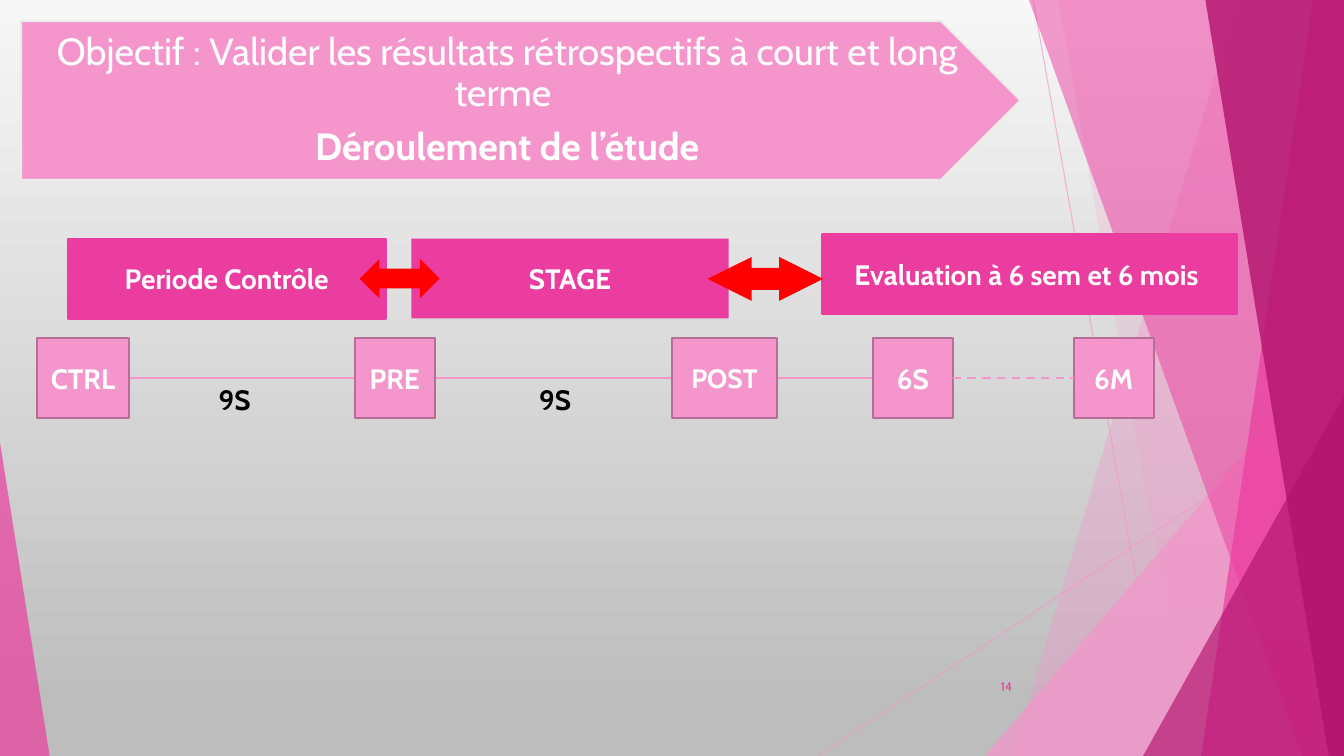
from lxml import etree
from pptx import Presentation
from pptx.dml.color import RGBColor
from pptx.enum.dml import MSO_LINE
from pptx.enum.shapes import MSO_CONNECTOR, MSO_SHAPE
from pptx.enum.text import MSO_ANCHOR, MSO_AUTO_SIZE, PP_ALIGN
from pptx.oxml.ns import qn
from pptx.util import Pt

STRAIGHT = MSO_CONNECTOR.STRAIGHT
DASH = MSO_LINE.DASH
RECTANGLE = MSO_SHAPE.RECTANGLE
TRIANGLE = MSO_SHAPE.ISOSCELES_TRIANGLE
DOUBLE_ARROW = MSO_SHAPE.LEFT_RIGHT_ARROW
PENTAGON = MSO_SHAPE.PENTAGON
MIDDLE = MSO_ANCHOR.MIDDLE
TOP = MSO_ANCHOR.TOP
NO_FIT = MSO_AUTO_SIZE.NONE
LEFT, CENTER, RIGHT = PP_ALIGN.LEFT, PP_ALIGN.CENTER, PP_ALIGN.RIGHT

FONT = "Cabin"
LIGHT, PINK, DARK = "F496CB", "EB3D9F", "B2136D"
WHITE, BLACK, RED = "FFFFFF", "000000", "FF0000"
WIDTH, HEIGHT = 960, 540
AXIS = 270


def colour(value):
    """Turn a hex string into a colour."""
    return RGBColor.from_string(value)


class Page:
    """Draw styled elements on one slide, with lengths in points."""

    def __init__(self, deck):
        """Add a slide that has a title placeholder."""
        self.slide = deck.slides.add_slide(deck.slide_layouts[5])
        self.shapes = self.slide.shapes

    def background(self, start, end, end_position):
        """Fill the slide with a gradient from top to bottom."""
        fill = self.slide.background.fill
        fill.gradient()
        fill.gradient_angle = 270
        for stop, value, position in zip(fill.gradient_stops, (start, end), (0, end_position)):
            stop.color.rgb = colour(value)
            stop.position = position

    def fade(self, shape, percent):
        """Set the opacity of the first colour of a shape."""
        value = next(shape._element.spPr.iter(qn("a:srgbClr")))
        etree.SubElement(value, qn("a:alpha"), val=str(percent * 1000))

    def paint(self, shape, fill, line=None, opacity=100):
        """Give a shape its fill, outline and opacity."""
        shape.shadow.inherit = False
        shape.fill.solid()
        shape.fill.fore_color.rgb = colour(fill)
        if line:
            shape.line.color.rgb = colour(line)
            shape.line.width = Pt(1.5)
        else:
            shape.line.fill.background()
        if opacity < 100:
            self.fade(shape, opacity)

    def style(self, para, size, value, bold=False, align=CENTER):
        """Format one paragraph."""
        para.alignment = align
        para.font.name = FONT
        para.font.size = Pt(size)
        para.font.bold = bold
        para.font.color.rgb = colour(value)

    def shape(self, kind, frame, fill, line=None, opacity=100, adjustments=()):
        """Add a preset shape."""
        shape = self.shapes.add_shape(kind, *map(Pt, frame))
        for index, value in enumerate(adjustments):
            shape.adjustments[index] = value
        self.paint(shape, fill, line, opacity)
        return shape

    def box(self, frame, text, fill, line=None, size=20):
        """Add a rectangle with a bold white label."""
        frame_text = self.shape(RECTANGLE, frame, fill, line).text_frame
        frame_text.text = text
        frame_text.word_wrap = True
        frame_text.vertical_anchor = MIDDLE
        self.style(frame_text.paragraphs[0], size, WHITE, True)

    def band(self, top_left, bottom_left, fill, opacity):
        """Add a full-height band that reaches the right edge."""
        builder = self.shapes.build_freeform(top_left, 0, scale=float(Pt(1)))
        builder.add_line_segments([(WIDTH, 0), (WIDTH, HEIGHT), (bottom_left, HEIGHT)])
        self.paint(builder.convert_to_shape(), fill, opacity=opacity)

    def line(self, start, end, width=1.5, dash=None, opacity=100):
        """Add a straight line."""
        line = self.shapes.add_connector(STRAIGHT, *map(Pt, start + end))
        line.line.color.rgb = colour(LIGHT)
        line.line.width = Pt(width)
        if dash:
            line.line.dash_style = dash
        if opacity < 100:
            self.fade(line, opacity)
        etree.SubElement(line._element.spPr, qn("a:effectLst"))

    def text(self, frame, text, size, value, bold=False, align=LEFT, anchor=TOP):
        """Add a text box."""
        frame_text = self.shapes.add_textbox(*map(Pt, frame)).text_frame
        frame_text.word_wrap = True
        frame_text.vertical_anchor = anchor
        frame_text.text = text
        self.style(frame_text.paragraphs[0], size, value, bold, align)

    def title(self, frame, lines):
        """Bring the title to the front and fill it with (text, bold) lines."""
        title = self.shapes.title
        title.left, title.top, title.width, title.height = map(Pt, frame)
        self.shapes[-1]._element.addnext(title._element)
        frame_text = title.text_frame
        frame_text.auto_size = NO_FIT
        frame_text.word_wrap = True
        frame_text.vertical_anchor = MIDDLE
        frame_text.margin_left, frame_text.margin_right = Pt(11.5), Pt(3)
        frame_text.margin_top = frame_text.margin_bottom = Pt(5.75)
        frame_text.text = "\n".join(text for text, _ in lines)
        for para, (_, bold) in zip(frame_text.paragraphs, lines):
            self.style(para, 27, WHITE, bold)
            para.line_spacing = 0.9
            para.space_before = Pt(0)
            para.space_after = Pt(9.5)


def draw_decor(page):
    """Draw the background and the translucent facets."""
    page.background("F7F7F7", "BDBDBD", 0.94)
    page.line((738, 0), (834, HEIGHT), 0.75, opacity=70)
    page.line((WIDTH, 290), (584.5, HEIGHT), 0.75, opacity=70)
    page.band(884, 723, LIGHT, 36)
    page.band(756, 852, LIGHT, 20)
    page.shape(TRIANGLE, (703.5, 240, 256.5, 300), LIGHT, None, 72, [1])
    page.band(735, 929.5, PINK, 50)
    page.band(938, 858, PINK, 70)
    page.band(861, 949, DARK, 80)
    page.shape(TRIANGLE, (816.5, 283, 143.5, 257), DARK, None, 66, [1])
    page.shape(TRIANGLE, (0, 316, 35.5, 224), PINK, None, 70, [0])


def draw_timeline(page):
    """Draw the measurement points, the phases and their arrows."""
    page.line((92, AXIS), (623.5, AXIS))
    points = [("CTRL", 26.5, 65.5, 20), ("PRE", 253.5, 57, 20), ("POST", 480, 75, 19),
              ("6S", 623.5, 57, 20), ("6M", 767, 57, 20)]
    for label, left, width, size in points:
        page.box((left, AXIS - 28.5, width, 57), label, LIGHT, "B56F96", size)
    page.box((293.75, 170.5, 226.75, 57), "STAGE", PINK)
    page.box((48.5, 170.5, 227, 57), "Periode Contrôle", PINK, PINK)
    page.shape(DOUBLE_ARROW, (257, 185, 57, 28), RED)
    for left in (149, 378):
        page.text((left, AXIS, 42.5, 31.5), "9S", 20, BLACK, True)
    page.text((676, 476, 54, 29), "14", 9, PINK, align=RIGHT, anchor=MIDDLE)
    page.line((680.5, AXIS), (767, AXIS), dash=DASH)
    page.box((587.5, 167.5, 296, 57), "Evaluation à 6 sem et 6 mois ", PINK, PINK)
    page.shape(DOUBLE_ARROW, (505.5, 183.5, 82.5, 31.5), RED, adjustments=[0.5, 1])


def main():
    """Build and save the deck."""
    deck = Presentation()
    deck.slide_width, deck.slide_height = Pt(WIDTH), Pt(HEIGHT)
    page = Page(deck)
    draw_decor(page)
    draw_timeline(page)
    page.shape(PENTAGON, (15, 15, 714, 113.5), LIGHT, "EBEBEB")
    page.title((15, 15, 686, 113.5), [
        ("Objectif : Valider les résultats rétrospectifs à court et long terme ", False),
        ("Déroulement de l’étude", True),
    ])
    deck.save("out.pptx")


if __name__ == "__main__":
    main()
